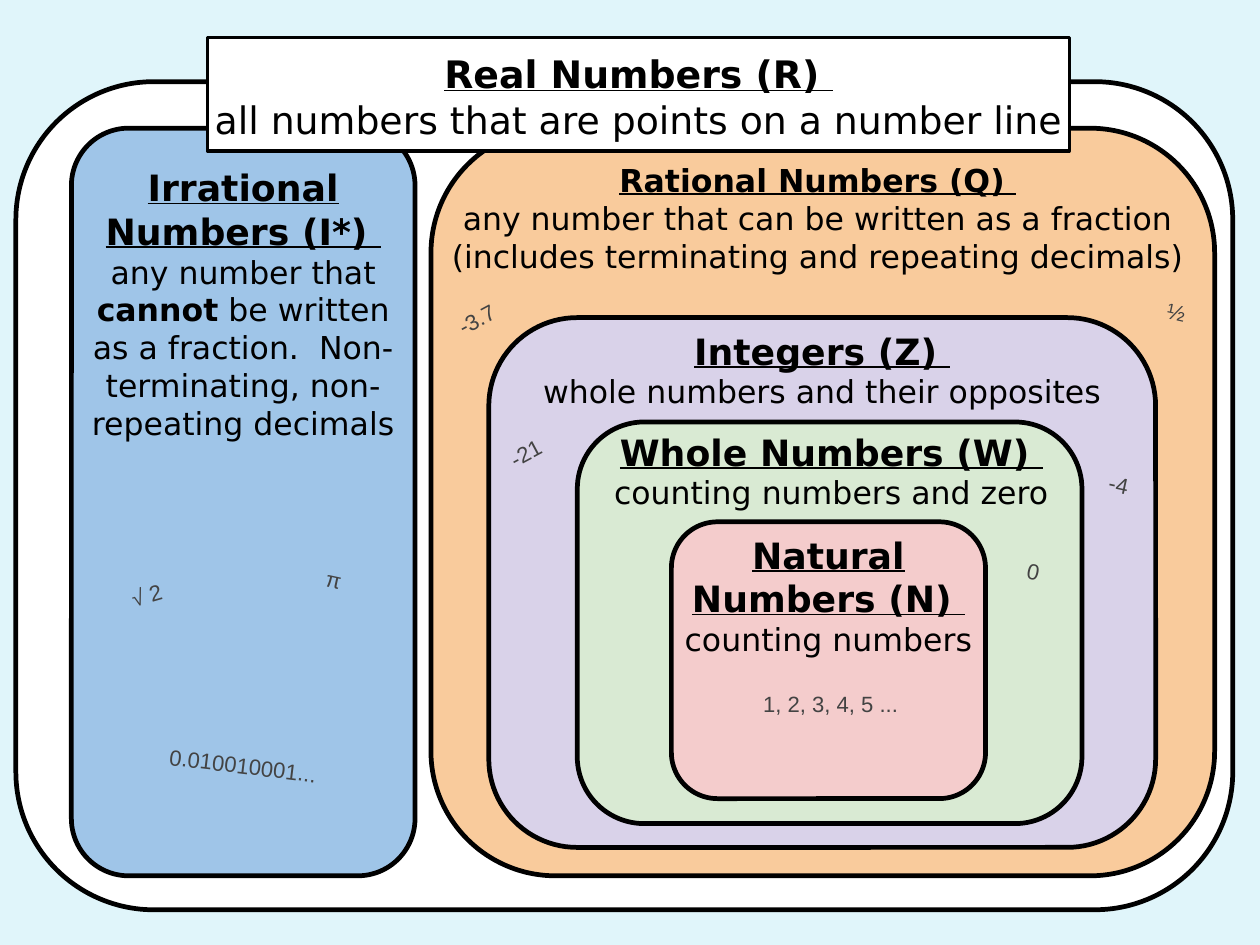
from pptx import Presentation
from pptx.dml.color import RGBColor
from pptx.enum.shapes import MSO_SHAPE as SHAPE
from pptx.enum.text import MSO_ANCHOR, PP_ALIGN
from pptx.util import Inches, Pt

SKY = RGBColor(0xE0, 0xF5, 0xFA)
WHITE = RGBColor(0xFF, 0xFF, 0xFF)
BLACK = RGBColor(0x00, 0x00, 0x00)
GRAY = RGBColor(0x43, 0x43, 0x43)
ORANGE = RGBColor(0xF9, 0xCB, 0x9C)
PURPLE = RGBColor(0xD9, 0xD2, 0xE9)
GREEN = RGBColor(0xD9, 0xEA, 0xD3)
PINK = RGBColor(0xF4, 0xCC, 0xCC)
BLUE = RGBColor(0x9F, 0xC5, 0xE8)

PLAIN = {"name": "DejaVu Sans", "bold": False, "underline": False}
STRONG = {**PLAIN, "bold": True}
TITLE = {**STRONG, "underline": True}
EXAMPLE = {"name": "Arial", "size": Pt(14)}


class NumberSlide:
    def __init__(self, prs):
        self.s = prs.slides.add_slide(prs.slide_layouts[6])
        fill = self.s.background.fill
        fill.solid()
        fill.fore_color.rgb = SKY

    def box(self, kind, at, color, weight=3):
        sp = self.s.shapes.add_shape(kind, *map(Inches, at))
        sp.shadow.inherit = False
        sp.fill.solid()
        sp.fill.fore_color.rgb = color
        sp.line.color.rgb = BLACK
        sp.line.width = Pt(weight)

    def text(self, at, paragraphs, color=BLACK, inset=0.1, angle=0):
        sp = self.s.shapes.add_textbox(*map(Inches, at))
        sp.rotation = angle
        tf = sp.text_frame
        frame = {"word_wrap": True, "vertical_anchor": MSO_ANCHOR.TOP,
                 "margin_top": Inches(inset), "margin_bottom": Inches(inset)}
        for key, value in frame.items():
            setattr(tf, key, value)
        for i, runs in enumerate(paragraphs):
            p = tf.add_paragraph() if i else tf.paragraphs[0]
            p.alignment = PP_ALIGN.CENTER
            for words, style in runs:
                r = p.add_run()
                r.text = words
                r.font.color.rgb = color
                for key, value in style.items():
                    setattr(r.font, key, value)

    def definition(self, at, title, body, title_size=23, body_size=20):
        self.text(at, [[(title, {**TITLE, "size": Pt(title_size)})],
                       [(words, {**style, "size": Pt(body_size)}) for words, style in body]])

    def example(self, words, at, angle=0):
        self.text(at, [[(words, EXAMPLE)]], GRAY, 0.05, angle)


def main():
    prs = Presentation()
    prs.slide_width, prs.slide_height = Inches(11.11), Inches(8.33)
    slide = NumberSlide(prs)

    slide.box(SHAPE.FLOWCHART_ALTERNATE_PROCESS, (0.14, 0.72, 10.73, 7.3), WHITE)
    for at, color in [
        ((3.8, 1.13, 6.91, 6.59), ORANGE),
        ((4.31, 2.8, 5.88, 4.67), PURPLE),
        ((5.09, 3.72, 4.45, 3.54), GREEN),
        ((5.92, 4.6, 2.77, 2.44), PINK),
        ((0.63, 1.13, 3.03, 6.59), BLUE),
    ]:
        slide.box(SHAPE.ROUNDED_RECTANGLE, at, color)

    slide.definition((3.8, 1.32, 6.82, 1.31), "Rational Numbers (Q) ",
                     [("any number that can be written as a fraction "
                       "(includes terminating and repeating decimals)", PLAIN)], 20)
    for at, title, body in [
        ((4.31, 2.8, 5.88, 0.96), "Integers (Z) ", "whole numbers and their opposites"),
        ((5.09, 3.69, 4.48, 0.96), "Whole Numbers (W) ", "counting numbers and zero"),
        ((5.92, 4.6, 2.77, 1.23), "Natural Numbers (N) ", "counting numbers"),
    ]:
        slide.definition(at, title, [(body, PLAIN)])
    slide.definition((0.63, 1.36, 3.03, 2.99), "Irrational Numbers (I*) ",
                     [("any number that ", PLAIN), ("cannot", STRONG),
                      (" be written as a fraction.  Non-terminating, "
                       "non-repeating decimals", PLAIN)])

    for words, at, angle in [
        ("½", (10.14, 2.58, 0.42, 0.55), 12.3),
        ("-3.7", (3.86, 2.64, 0.73, 0.43), 331.7),
        ("-4", (9.62, 4.1, 0.45, 0.52), 12.3),
        ("-21", (4.38, 3.82, 0.55, 0.42), 331.7),
        ("0", (8.94, 4.86, 0.26, 0.53), 12.3),
        ("1, 2, 3, 4, 5 ...", (6.11, 6.04, 2.43, 0.46), 0),
        ("π", (2.76, 4.94, 0.36, 0.38), 12.3),
        ("√ 2", (0.91, 5.07, 0.85, 0.63), 343.9),
        ("0.010010001...", (0.79, 6.58, 2.71, 0.3), 6.9),
    ]:
        slide.example(words, at, angle)

    slide.box(SHAPE.RECTANGLE, (1.83, 0.33, 7.6, 1), WHITE, 2.25)
    slide.definition((1.76, 0.35, 7.74, 0.96), "Real Numbers (R) ",
                     [("all numbers that are points on a number line", PLAIN)], 24, 24)

    prs.save("out.pptx")


if __name__ == "__main__":
    main()
